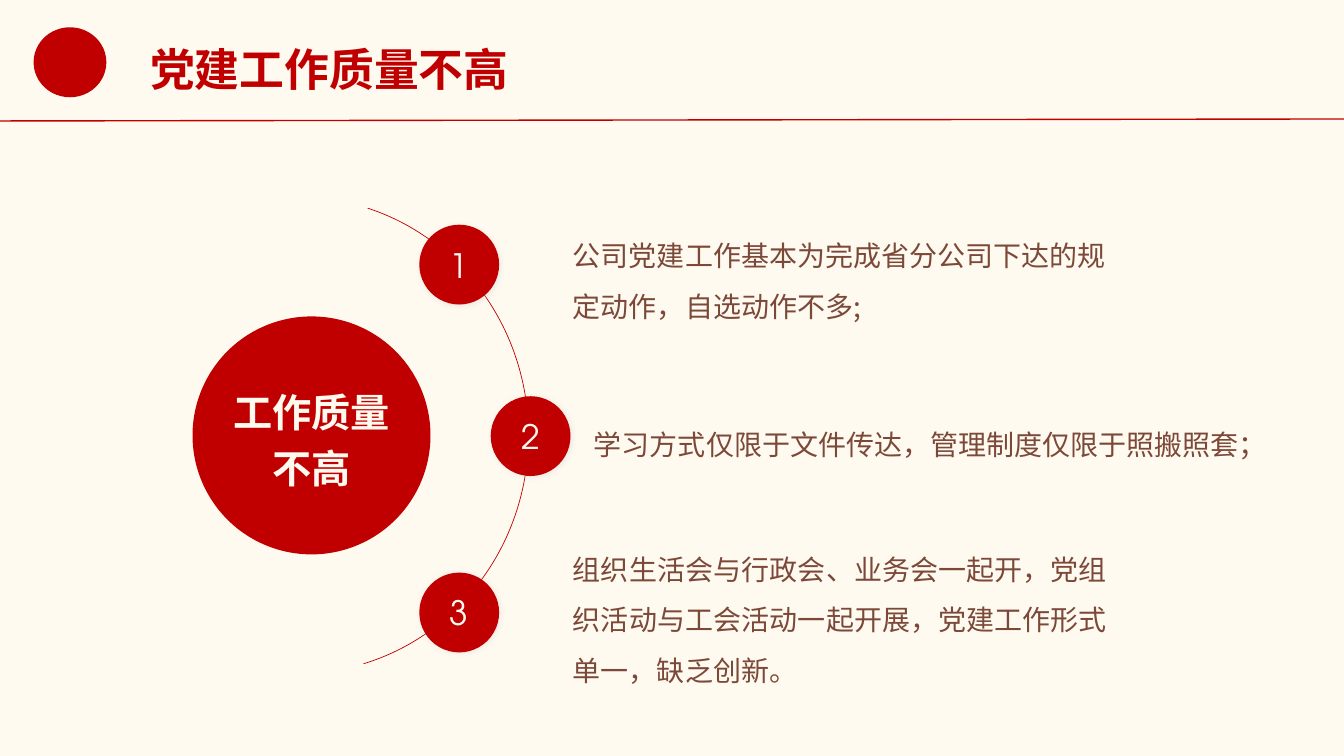
from dataclasses import dataclass

from lxml.etree import SubElement
from pptx import Presentation
from pptx.dml.color import RGBColor
from pptx.enum.shapes import MSO_CONNECTOR, MSO_SHAPE
from pptx.enum.text import MSO_ANCHOR, MSO_AUTO_SIZE, PP_ALIGN
from pptx.oxml.ns import qn
from pptx.util import Pt

COLORS = {"red": "C00000", "cream": "FFFAF0", "brown": "7C4939", "shadow": "CCCCCC"}
SANS = "Noto Sans CJK SC"
GEOMETRIC = "TeX Gyre Adventor"
BADGE = 57


@dataclass(frozen=True)
class Box:
    left: float
    top: float
    width: float
    height: float

    def emu(self) -> list:
        return [Pt(v) for v in (self.left, self.top, self.width, self.height)]


@dataclass(frozen=True)
class Issue:
    badge_left: float
    badge_top: float
    box: Box
    text: str
    align: PP_ALIGN


ISSUES = [
    Issue(299.5, 160.5, Box(402, 155, 396, 75.5),
          "公司党建工作基本为完成省分公司下达的规定动作，自选动作不多;", PP_ALIGN.LEFT),
    Issue(350.5, 283, Box(417, 289.5, 527, 44),
          "学习方式仅限于文件传达，管理制度仅限于照搬照套；", PP_ALIGN.JUSTIFY),
    Issue(299.5, 409, Box(402, 379, 396, 116.5),
          "组织生活会与行政会、业务会一起开，党组织活动与工会活动一起开展，党建工作形式单一，缺乏创新。",
          PP_ALIGN.JUSTIFY),
]


def rgb(name: str) -> RGBColor:
    return RGBColor.from_string(COLORS[name])


def write(sp, *lines: str, size: float, color: str, font: str = SANS, bold: bool = False,
          align: PP_ALIGN = PP_ALIGN.LEFT, spacing: float = 1.0,
          anchor: MSO_ANCHOR = MSO_ANCHOR.TOP, inset: bool = True, wrap: bool = True) -> None:
    tf = sp.text_frame
    tf.auto_size, tf.word_wrap, tf.vertical_anchor = MSO_AUTO_SIZE.NONE, wrap, anchor
    if not inset:
        tf.margin_left = tf.margin_top = tf.margin_right = tf.margin_bottom = 0
    for i, line in enumerate(lines):
        p = tf.add_paragraph() if i else tf.paragraphs[0]
        p.alignment, p.line_spacing = align, spacing
        p.space_before = p.space_after = Pt(0)
        pPr = p._p.get_or_add_pPr()
        pPr.set("marL", "0")
        pPr.set("indent", "0")
        SubElement(pPr, qn("a:buNone"))
        r = p.add_run()
        r.text = line
        r.font.size, r.font.bold, r.font.name = Pt(size), bold, font
        r.font.color.rgb = rgb(color)
        rPr = r._r.get_or_add_rPr()
        rPr.set("lang", "zh-CN")
        SubElement(rPr, qn("a:ea"), typeface=font)


def place(sp, box: Box):
    sp.left, sp.top, sp.width, sp.height = box.emu()
    return sp


def add_disc(s, box: Box):
    sp = s.shapes.add_shape(MSO_SHAPE.OVAL, *box.emu())
    sp.shadow.inherit = False
    sp.fill.solid()
    sp.fill.fore_color.rgb = rgb("red")
    sp.line.fill.background()
    return sp


def add_shadow(sp) -> None:
    effects = sp._element.spPr.find(qn("a:effectLst"))
    outer = SubElement(effects, qn("a:outerShdw"), blurRad=str(Pt(4)), dist=str(Pt(1)),
                       dir=str(45 * 60000), algn="ctr", rotWithShape="0")
    clr = SubElement(outer, qn("a:srgbClr"), val=COLORS["shadow"])
    SubElement(clr, qn("a:alpha"), val="36000")


def add_header(s) -> None:
    add_disc(s, Box(24, 19.5, 52, 50))
    rule = s.shapes.add_connector(MSO_CONNECTOR.STRAIGHT, Pt(0), Pt(86.4), Pt(960), Pt(85))
    rule.line.color.rgb, rule.line.width = rgb("red"), Pt(1)
    SubElement(rule._element.spPr, qn("a:effectLst"))
    write(place(s.shapes.title, Box(100, 26, 273, 46)), "党建工作质量不高",
          size=32, color="red", bold=True, wrap=False)


def add_hub(s) -> None:
    hub = add_disc(s, Box(137.5, 226, 170, 170))
    write(hub, "工作质量", "不高", size=28, color="cream", bold=True, align=PP_ALIGN.CENTER,
          spacing=1.2, anchor=MSO_ANCHOR.MIDDLE, inset=False)
    arc = s.shapes.add_shape(MSO_SHAPE.ARC, *Box(50, 141, 327.5, 340).emu())
    arc.shadow.inherit = False
    arc.adjustments[0], arc.adjustments[1] = 172.05, 44.58
    arc.fill.background()
    arc.line.color.rgb, arc.line.width = rgb("red"), Pt(0.5)


def add_issue(s, number: int, issue: Issue, body) -> None:
    badge = add_disc(s, Box(issue.badge_left, issue.badge_top, BADGE, BADGE))
    add_shadow(badge)
    write(badge, str(number), size=24, color="cream", font=GEOMETRIC,
          align=PP_ALIGN.CENTER, anchor=MSO_ANCHOR.MIDDLE, inset=False)
    write(place(body, issue.box), issue.text, size=20, color="brown",
          align=issue.align, spacing=1.5)


def main() -> None:
    """Build the slide on weak Party-building work quality and save it."""
    prs = Presentation()
    prs.slide_width, prs.slide_height = Pt(960), Pt(540)
    s = prs.slides.add_slide(prs.slide_layouts.get_by_name("Comparison"))
    s.background.fill.solid()
    s.background.fill.fore_color.rgb = rgb("cream")
    bodies = [sp for sp in s.placeholders if sp.placeholder_format.idx > 0]
    add_header(s)
    add_hub(s)
    for number, (issue, body) in enumerate(zip(ISSUES, bodies), start=1):
        add_issue(s, number, issue, body)
    for spare in bodies[len(ISSUES):]:
        spare._element.getparent().remove(spare._element)
    prs.save("out.pptx")


if __name__ == "__main__":
    main()
